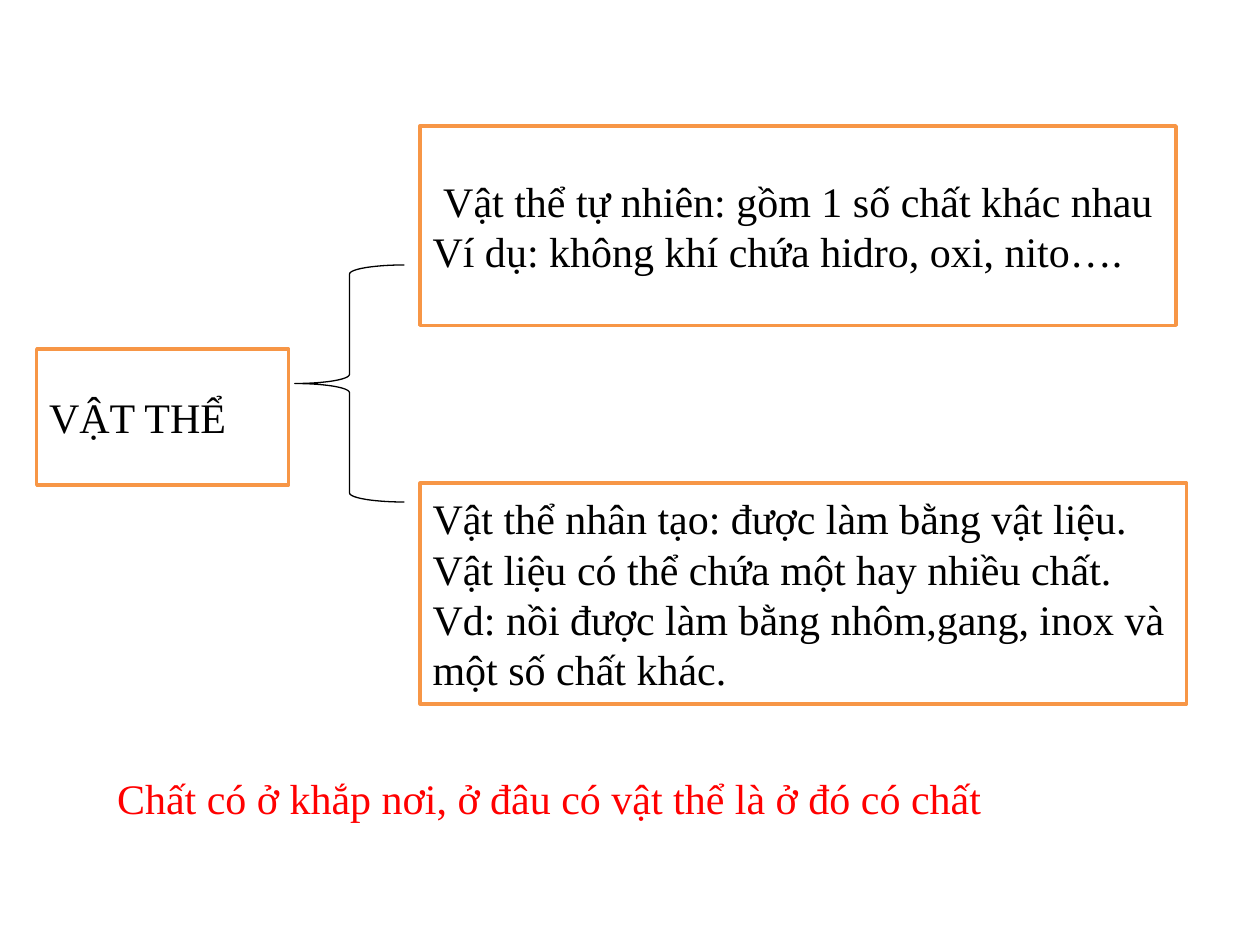
import pptx
import pptx.dml.color
import pptx.enum.shapes
import pptx.enum.text
import pptx.util

Cm = pptx.util.Cm
Pt = pptx.util.Pt
Align = pptx.enum.text.PP_ALIGN
Shapes = pptx.enum.shapes.MSO_SHAPE

BLACK, WHITE, ORANGE, RED = "000000", "FFFFFF", "F79646", "FF0000"


def color(hex_value):
    return pptx.dml.color.RGBColor.from_string(hex_value)


class SlideBuilder:
    font_name = "Times New Roman"
    font_size = Pt(24)

    def __init__(self, slide):
        self.slide = slide

    def set_text(self, text_frame, lines, text_color=BLACK, first_align=Align.LEFT):
        text_frame.word_wrap = True
        text_frame.text = "\n".join(lines)
        for index, paragraph in enumerate(text_frame.paragraphs):
            paragraph.alignment = Align.LEFT if index else first_align
            for run in paragraph.runs:
                run.font.name = self.font_name
                run.font.size = self.font_size
                run.font.color.rgb = color(text_color)

    def outline(self, preset, position, line_color, line_width):
        shape = self.slide.shapes.add_shape(preset, *map(Cm, position))
        shape.shadow.inherit = False
        shape.line.color.rgb = color(line_color)
        shape.line.width = Pt(line_width)
        return shape

    def box(self, position, lines, first_align=Align.LEFT):
        shape = self.outline(Shapes.RECTANGLE, position, ORANGE, 2)
        shape.fill.solid()
        shape.fill.fore_color.rgb = color(WHITE)
        shape.text_frame.vertical_anchor = pptx.enum.text.MSO_ANCHOR.MIDDLE
        self.set_text(shape.text_frame, lines, first_align=first_align)

    def brace(self, position):
        shape = self.outline(Shapes.RIGHT_BRACE, position, BLACK, 0.75)
        shape.fill.background()
        shape.rotation = 180

    def note(self, position, text, text_color):
        shape = self.slide.shapes.add_textbox(*map(Cm, position))
        self.set_text(shape.text_frame, [text], text_color)
        shape.text_frame.auto_size = pptx.enum.text.MSO_AUTO_SIZE.SHAPE_TO_FIT_TEXT


def main():
    presentation = pptx.Presentation()
    presentation.slide_width = Cm(25.4)
    presentation.slide_height = Cm(19.05)
    builder = SlideBuilder(presentation.slides.add_slide(presentation.slide_layouts[6]))

    # Concept and its two kinds
    branch_left = 8.47
    builder.box((0.74, 7.04, 5.08, 2.74), ["VẬT THỂ"])
    builder.box(
        (branch_left, 2.54, 15.24, 4.02),
        ["Vật thể tự nhiên: gồm 1 số chất khác nhau",
         "Ví dụ: không khí chứa hidro, oxi, nito…."],
        first_align=Align.CENTER,
    )
    builder.box(
        (branch_left, 9.74, 15.45, 4.45),
        ["Vật thể nhân tạo: được làm bằng vật liệu. Vật liệu có thể chứa một hay nhiều chất.",
         "Vd: nồi được làm bằng nhôm,gang, inox và một số chất khác."],
    )

    # Brace opening towards the two kinds
    builder.brace((5.94, 5.34, 2.21, 4.78))

    # Conclusion
    builder.note((2.11, 15.45, 20.75, 1.27),
                 "Chất có ở khắp nơi, ở đâu có vật thể là ở đó có chất", RED)

    presentation.save("out.pptx")


if __name__ == "__main__":
    main()
